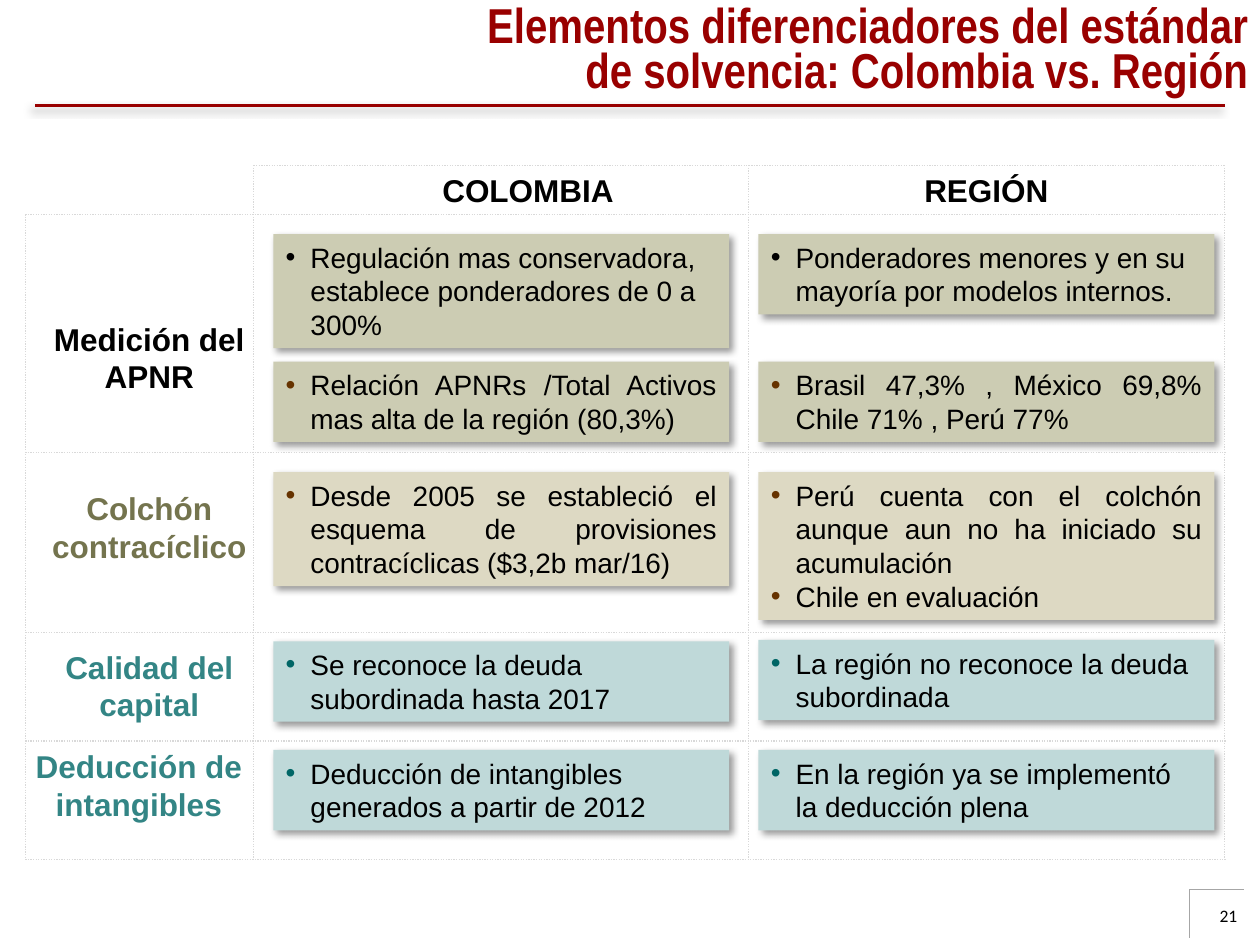
import pptx
import pptx.dml.color
import pptx.enum.dml
import pptx.enum.shapes
import pptx.enum.text
import pptx.oxml
import pptx.oxml.ns
import pptx.util

Cm = pptx.util.Cm
Pt = pptx.util.Pt
ALIGN = pptx.enum.text.PP_ALIGN
NAMESPACE = pptx.oxml.ns.nsdecls("a")

COLUMNS = [0.51, 5.11, 15.09, 24.69]
ROWS = [3.33, 4.32, 9.12, 12.75, 14.94, 17.32]
CARD_LEFTS = [5.51, 15.29]
CARD_WIDTH = 9.19

BANDS = [
    dict(label="Medición del APNR", color="000000", left=0.51, drop=2.0, fill="CCCCB3", cards=[
        (0, 0.4, 3, None, ALIGN.LEFT, ["Regulación mas conservadora, establece ponderadores de 0 a 300%"]),
        (1, 0.4, 2, None, ALIGN.LEFT, ["Ponderadores menores y en su mayoría por modelos internos."]),
        (0, 2.97, 2, "663300", ALIGN.JUSTIFY, ["Relación APNRs /Total Activos mas alta de la región (80,3%)"]),
        (1, 2.97, 2, "663300", ALIGN.JUSTIFY, ["Brasil 47,3% , México 69,8% Chile 71% , Perú 77%"]),
    ]),
    dict(label="Colchón contracíclico", color="74744E", left=0.51, drop=0.61, fill="DDD9C3", cards=[
        (0, 0.4, 3, "663300", ALIGN.JUSTIFY,
         ["Desde 2005 se estableció el esquema de provisiones contracíclicas ($3,2b mar/16)"]),
        (1, 0.4, 4, "663300", ALIGN.JUSTIFY,
         ["Perú cuenta con el colchón aunque aun no ha iniciado su acumulación", "Chile en evaluación"]),
    ]),
    dict(label="Calidad del capital", color="338585", left=0.51, drop=0.18, fill="BFD9D9", cards=[
        (0, 0.18, 2, "006666", ALIGN.LEFT, ["Se reconoce la deuda subordinada hasta 2017"]),
        (1, 0.15, 2, "006666", ALIGN.LEFT, ["La región no reconoce la deuda subordinada"]),
    ]),
    dict(label="Deducción de intangibles", color="338585", left=0.3, drop=0, fill="BFD9D9", cards=[
        (0, 0.18, 2, "006666", ALIGN.LEFT, ["Deducción de intangibles generados a partir de 2012"]),
        (1, 0.18, 2, "006666", ALIGN.LEFT, ["En la región ya se implementó la deducción plena"]),
    ]),
]


def color_of(value):
    return pptx.dml.color.RGBColor.from_string(value)


def set_attributes(target, values):
    for name, value in values.items():
        setattr(target, name, value)


def add_shadow(effects, direction):
    effects.append(pptx.oxml.parse_xml(
        f'<a:outerShdw {NAMESPACE} blurRad="50800" dist="38100" dir="{direction * 60000}" '
        'algn="tl" rotWithShape="0"><a:srgbClr val="000000"><a:alpha val="40000"/>'
        '</a:srgbClr></a:outerShdw>'))


def write_paragraph(paragraph, text, size, color, alignment, name="Arial", bold=False):
    paragraph.text = text
    paragraph.alignment = alignment
    font = paragraph.runs[0].font
    set_attributes(font, dict(size=Pt(size), name=name, bold=bold))
    font.color.rgb = color_of(color)


def draw_text(slide, left, top, width, height, text, size, color, alignment, **font_values):
    shape = slide.shapes.add_textbox(Cm(left), Cm(top), Cm(width), Cm(height))
    shape.text_frame.word_wrap = True
    paragraph = shape.text_frame.paragraphs[0]
    write_paragraph(paragraph, text, size, color, alignment, **font_values)
    return paragraph


def draw_line(slide, x1, y1, x2, y2, color, width, dash=None):
    line = slide.shapes.add_connector(
        pptx.enum.shapes.MSO_CONNECTOR.STRAIGHT, Cm(x1), Cm(y1), Cm(x2), Cm(y2))
    line.line.color.rgb = color_of(color)
    set_attributes(line.line, dict(width=Pt(width), dash_style=dash))
    effects = pptx.oxml.parse_xml(f"<a:effectLst {NAMESPACE}/>")
    line._element.spPr.append(effects)
    return effects


def draw_title(slide, left, top, width, height):
    rule = draw_line(slide, 0.71, 2.13, 24.69, 2.13, "990000", 2)
    add_shadow(rule, 135)
    paragraph = draw_text(
        slide, left, top, width, height,
        "Elementos diferenciadores del estándar de solvencia: Colombia vs. Región",
        28, "990000", ALIGN.RIGHT, name="Arial Narrow", bold=True)
    paragraph.line_spacing = 0.75


def draw_page_number(slide, left, top):
    draw_line(slide, left, top, left + 1.1, top, "A6A6A6", 0.25)
    draw_line(slide, left, top, left, top + 0.97, "A6A6A6", 0.25)
    draw_text(slide, left - 0.36, top + 0.18, 1.57, 1.02, "21", 10, "000000", ALIGN.RIGHT,
              name="Calibri")


def draw_card(slide, left, top, lines, fill, bullet_color, alignment, texts):
    shape = slide.shapes.add_shape(
        pptx.enum.shapes.MSO_SHAPE.RECTANGLE,
        Cm(left), Cm(top), Cm(CARD_WIDTH), Cm(0.26 + 0.68 * lines))
    shape.shadow.inherit = False
    add_shadow(shape._element.spPr.find(pptx.oxml.ns.qn("a:effectLst")), 45)
    shape.fill.solid()
    shape.fill.fore_color.rgb = color_of(fill)
    shape.line.fill.background()
    frame = shape.text_frame
    set_attributes(frame, dict(
        word_wrap=True, vertical_anchor=pptx.enum.text.MSO_ANCHOR.TOP,
        margin_right=Cm(0.4 if alignment == ALIGN.LEFT else 0.25)))
    for index, text in enumerate(texts):
        paragraph = frame.add_paragraph() if index else frame.paragraphs[0]
        properties = paragraph._p.get_or_add_pPr()
        properties.set("marL", str(Cm(0.5)))
        properties.set("indent", str(-Cm(0.5)))
        if bullet_color:
            properties.append(pptx.oxml.parse_xml(
                f'<a:buClr {NAMESPACE}><a:srgbClr val="{bullet_color}"/></a:buClr>'))
        properties.append(pptx.oxml.parse_xml(f'<a:buFont {NAMESPACE} typeface="Arial"/>'))
        properties.append(pptx.oxml.parse_xml(f'<a:buChar {NAMESPACE} char="•"/>'))
        write_paragraph(paragraph, text, 16, "000000", alignment)


def draw_band(slide, top, band):
    draw_text(slide, band["left"], top + band["drop"], 5, 1.8, band["label"], 18,
              band["color"], ALIGN.CENTER, bold=True)
    for column, drop, lines, bullet_color, alignment, texts in band["cards"]:
        draw_card(slide, CARD_LEFTS[column], top + drop, lines, band["fill"],
                  bullet_color, alignment, texts)


def draw_headers(slide, top):
    for left, text in [(7.85, "COLOMBIA"), (17.09, "REGIÓN")]:
        draw_text(slide, left, top, 5.59, 1.02, text, 18, "000000", ALIGN.CENTER, bold=True)


def draw_grid(slide, columns, rows):
    style = ("D9D9D9", 0.75, pptx.enum.dml.MSO_LINE.ROUND_DOT)
    for index, x in enumerate(columns):
        draw_line(slide, x, rows[0 if index else 1], x, rows[-1], *style)
    for index, y in enumerate(rows):
        draw_line(slide, columns[0 if index else 1], y, columns[-1], y, *style)


def main():
    presentation = pptx.Presentation()
    set_attributes(presentation, dict(slide_width=Cm(25.4), slide_height=Cm(19.05)))
    slide = presentation.slides.add_slide(presentation.slide_layouts[6])
    draw_title(slide, 9.3, 0.05, 16.1, 2.06)
    draw_page_number(slide, 23.98, 17.93)
    draw_headers(slide, ROWS[0])
    for top, band in zip(ROWS[1:], BANDS):
        draw_band(slide, top, band)
    draw_grid(slide, COLUMNS, ROWS)
    presentation.save("out.pptx")


if __name__ == "__main__":
    main()
